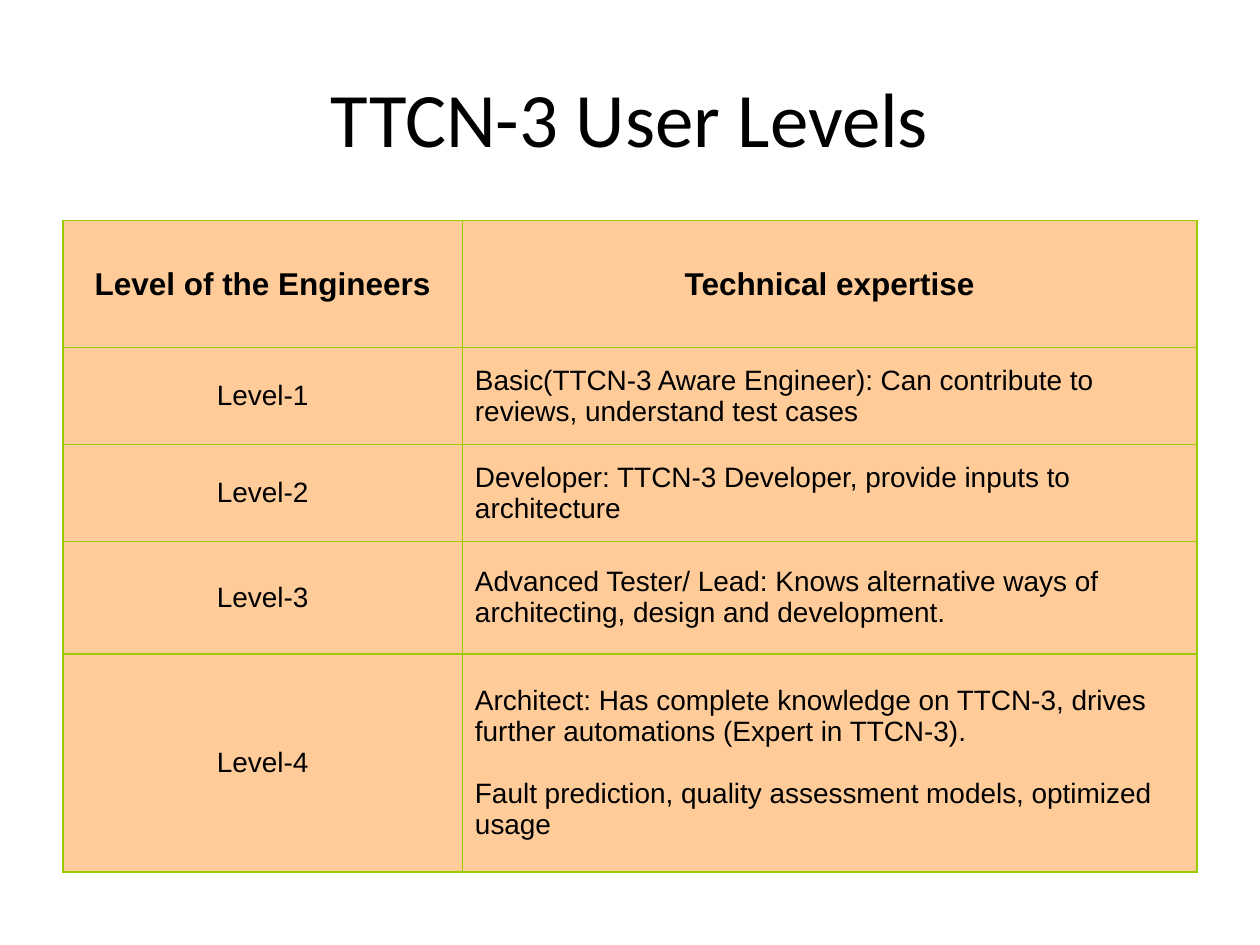
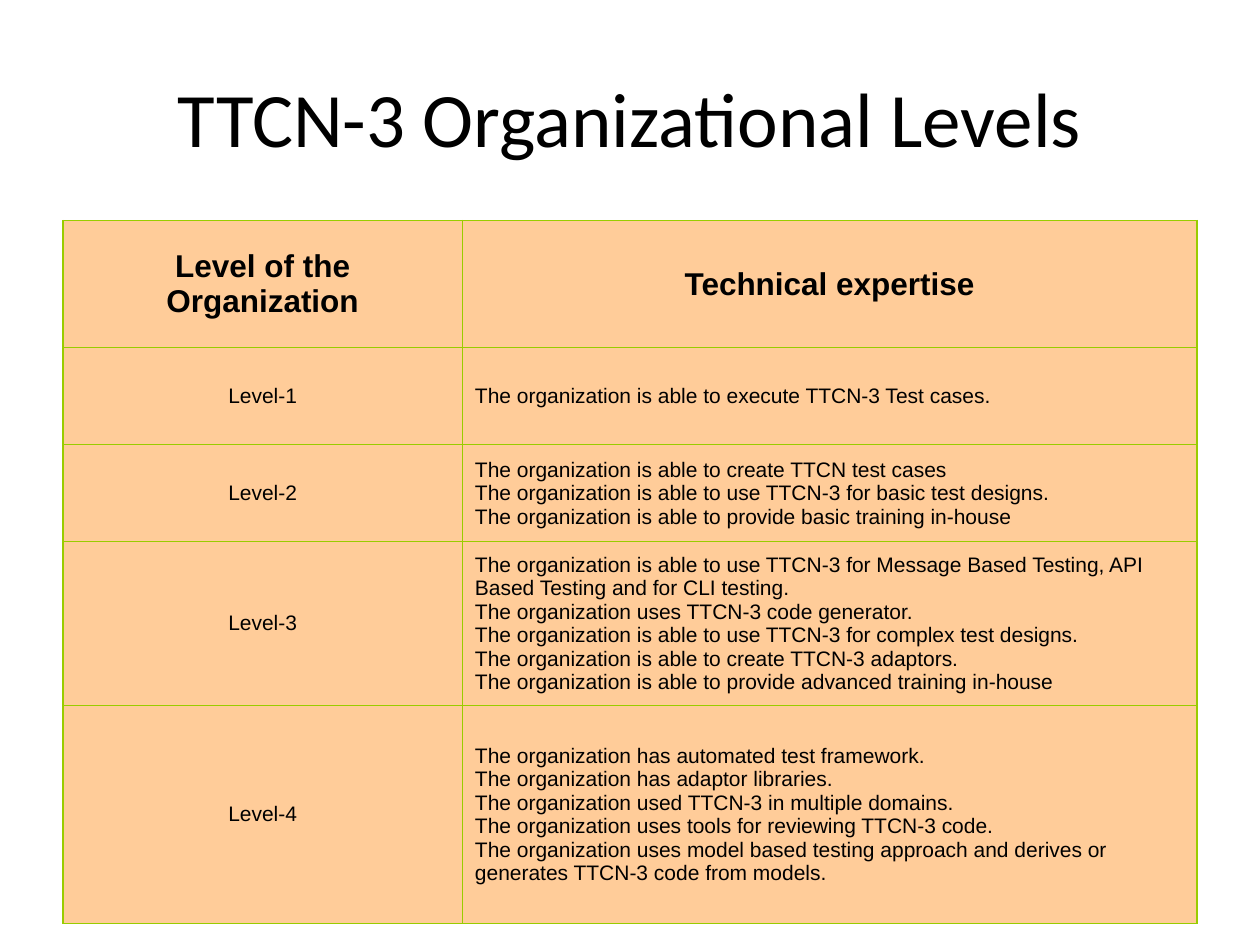
from lxml import etree
from pptx import Presentation
from pptx.dml.color import RGBColor
from pptx.enum.text import MSO_ANCHOR, PP_ALIGN
from pptx.oxml.ns import qn
from pptx.util import Inches, Pt

CENTER, LEFT = PP_ALIGN.CENTER, PP_ALIGN.LEFT
MIDDLE = MSO_ANCHOR.MIDDLE

COLORS = {"text": "000000", "cell": "FFCC99", "border": "99CC00"}
TITLE_FONT, TABLE_FONT = "Calibri", "Arial"
TITLE_SIZE, HEADER_SIZE = 44, 18
COLUMN_WIDTHS = [3.17, 5.83]
BORDER_SIDES = ["a:lnL", "a:lnR", "a:lnT", "a:lnB"]

LEVEL_SLIDES = [
    {
        "title": "TTCN-3 User Levels",
        "subject": "Level of the Engineers",
        "body_size": 16,
        "paragraph_gap": 18,
        "row_heights": [1.01, 0.77, 0.77, 0.89, 1.73],
        "expertise": [
            ["Basic(TTCN-3 Aware Engineer): Can contribute to reviews, understand test cases"],
            ["Developer: TTCN-3 Developer, provide inputs to architecture"],
            ["Advanced Tester/ Lead: Knows alternative ways of architecting, design and development."],
            ["Architect: Has complete knowledge on TTCN-3, drives further automations (Expert in TTCN-3).",
             "Fault prediction, quality assessment models, optimized usage"],
        ],
    },
    {
        "title": "TTCN-3 Organizational Levels",
        "subject": "Level of the Organization",
        "body_size": 12,
        "paragraph_gap": 0,
        "row_heights": [1.01, 0.77, 0.77, 1.22, 1.73],
        "expertise": [
            ["The organization is able to execute TTCN-3 Test cases."],
            ["The organization is able to create TTCN test cases",
             "The organization is able to use TTCN-3 for basic test designs.",
             "The organization is able to provide basic training in-house"],
            ["The organization is able to use TTCN-3 for Message Based Testing, "
             "API Based Testing and for CLI testing.",
             "The organization uses TTCN-3 code generator.",
             "The organization is able to use TTCN-3 for complex test designs.",
             "The organization is able to create TTCN-3 adaptors.",
             "The organization is able to provide advanced training in-house"],
            ["The organization has automated test framework.",
             "The organization has adaptor libraries.",
             "The organization used TTCN-3 in multiple domains.",
             "The organization uses tools for reviewing TTCN-3 code.",
             "The organization uses model based testing approach and derives or "
             "generates TTCN-3 code from models."],
        ],
    },
]


def write_paragraphs(text_frame, lines, font_name, size, alignment, bold=False, gap=0):
    """Fill a text frame with one paragraph per line, gap points apart."""
    text_frame.text = "\n".join(lines)
    for index, paragraph in enumerate(text_frame.paragraphs):
        paragraph.alignment = alignment
        if index and gap:
            paragraph.space_before = Pt(gap)
        for run in paragraph.runs:
            run.font.name = font_name
            run.font.size = Pt(size)
            run.font.bold = bold
            run.font.color.rgb = RGBColor.from_string(COLORS["text"])


def style_cell(cell):
    """Give a cell its border, fill and vertical centring."""
    properties = cell._tc.get_or_add_tcPr()
    for side in BORDER_SIDES:
        line = etree.SubElement(properties, qn(side), w=str(Pt(1)))
        line_fill = etree.SubElement(line, qn("a:solidFill"))
        etree.SubElement(line_fill, qn("a:srgbClr"), val=COLORS["border"])
    cell.fill.solid()
    cell.fill.fore_color.rgb = RGBColor.from_string(COLORS["cell"])
    cell.vertical_anchor = MIDDLE


presentation = Presentation()
presentation.slide_width = Inches(10)
presentation.slide_height = Inches(7.5)
blank_layout = presentation.slide_layouts[6]

for content in LEVEL_SLIDES:
    slide = presentation.slides.add_slide(blank_layout)

    title = slide.shapes.add_textbox(Inches(0.5), Inches(0.3), Inches(9), Inches(1.25))
    title.text_frame.word_wrap = True
    title.text_frame.vertical_anchor = MIDDLE
    write_paragraphs(title.text_frame, [content["title"]], TITLE_FONT, TITLE_SIZE, CENTER)

    row_heights = content["row_heights"]
    table = slide.shapes.add_table(
        len(row_heights), len(COLUMN_WIDTHS), Inches(0.5), Inches(1.75),
        Inches(sum(COLUMN_WIDTHS)), Inches(sum(row_heights))).table
    table.first_row = False
    table.horz_banding = False
    for column, width in zip(table.columns, COLUMN_WIDTHS):
        column.width = Inches(width)
    for row, height in zip(table.rows, row_heights):
        row.height = Inches(height)
    for cell in table.iter_cells():
        style_cell(cell)

    for column_index, heading in enumerate([content["subject"], "Technical expertise"]):
        write_paragraphs(table.cell(0, column_index).text_frame, [heading],
                         TABLE_FONT, HEADER_SIZE, CENTER, bold=True)
    for level, lines in enumerate(content["expertise"], start=1):
        write_paragraphs(table.cell(level, 0).text_frame, [f"Level-{level}"],
                         TABLE_FONT, content["body_size"], CENTER)
        write_paragraphs(table.cell(level, 1).text_frame, lines,
                         TABLE_FONT, content["body_size"], LEFT, gap=content["paragraph_gap"])

presentation.save("out.pptx")
